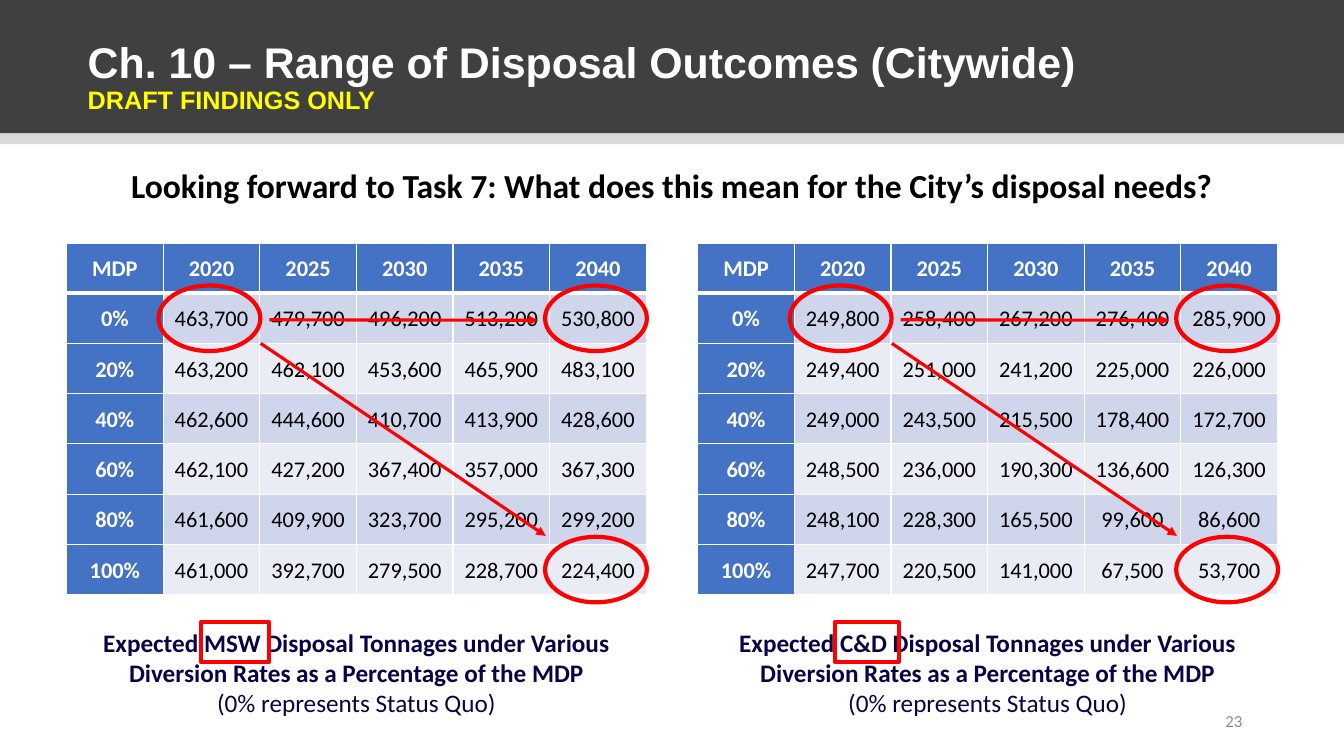
from dataclasses import dataclass
from lxml import etree
from pptx import Presentation
from pptx.dml.color import RGBColor
from pptx.enum.shapes import MSO_CONNECTOR, MSO_SHAPE
from pptx.enum.text import MSO_ANCHOR, PP_ALIGN
from pptx.oxml.ns import qn
from pptx.util import Inches, Pt

LINE = MSO_CONNECTOR.STRAIGHT
RECT, OVAL = MSO_SHAPE.RECTANGLE, MSO_SHAPE.OVAL
MID, TOP = MSO_ANCHOR.MIDDLE, MSO_ANCHOR.TOP
LEFT, MIDST, RIGHT = PP_ALIGN.LEFT, PP_ALIGN.CENTER, PP_ALIGN.RIGHT


@dataclass(frozen=True)
class Theme:
    head: str = "Arial"
    body: str = "Calibri"
    white: str = "FFFFFF"
    black: str = "000000"
    dark: str = "404040"
    pale: str = "D9D9D9"
    gray: str = "8C8C8C"
    blue: str = "4472C4"
    odd: str = "CFD5EA"
    even: str = "E9EBF5"
    navy: str = "090446"
    red: str = "FF0000"
    gold: str = "FFFF00"
    title: float = 30.6
    lead: float = 24
    note: float = 18
    cell: float = 16
    page: float = 12
    mark: float = 3
    arrow: float = 2.25


T = Theme()
WIDE, HIGH = 13.33, 7.5

# Table grid, in inches
GRID_TOP = 2.41
COL, ROW = 5.75 / 6, 3.49 / 7

YEARS = ["MDP", "2020", "2025", "2030", "2035", "2040"]
MSW = [
    ["0%", "463,700", "479,700", "496,200", "513,200", "530,800"],
    ["20%", "463,200", "462,100", "453,600", "465,900", "483,100"],
    ["40%", "462,600", "444,600", "410,700", "413,900", "428,600"],
    ["60%", "462,100", "427,200", "367,400", "357,000", "367,300"],
    ["80%", "461,600", "409,900", "323,700", "295,200", "299,200"],
    ["100%", "461,000", "392,700", "279,500", "228,700", "224,400"],
]
CND = [
    ["0%", "249,800", "258,400", "267,200", "276,400", "285,900"],
    ["20%", "249,400", "251,000", "241,200", "225,000", "226,000"],
    ["40%", "249,000", "243,500", "215,500", "178,400", "172,700"],
    ["60%", "248,500", "236,000", "190,300", "136,600", "126,300"],
    ["80%", "248,100", "228,300", "165,500", "99,600", "86,600"],
    ["100%", "247,700", "220,500", "141,000", "67,500", "53,700"],
]


def inch(*sizes):
    return [Inches(size) for size in sizes]


def spot(left, col, row):
    """Turn a grid place into slide lengths."""
    return inch(left + col * COL, GRID_TOP + row * ROW)


def style(font, size, color, bold=False, name=T.body):
    font.name, font.size, font.bold = name, Pt(size), bold
    font.color.rgb = RGBColor.from_string(color)


def paint(fill, color):
    fill.solid()
    fill.fore_color.rgb = RGBColor.from_string(color)


def add_band(slide, top, high, color):
    band = slide.shapes.add_shape(RECT, *inch(0, top, WIDE, high))
    band.shadow.inherit = False
    paint(band.fill, color)
    band.line.fill.background()


def add_text(slide, box, lines, size, color, align=MIDST, anchor=TOP):
    """Each line is a pair of text and bold."""
    frame = slide.shapes.add_textbox(*inch(*box)).text_frame
    frame.word_wrap = True
    frame.vertical_anchor = anchor
    for i, (text, bold) in enumerate(lines):
        para = frame.add_paragraph() if i else frame.paragraphs[0]
        para.text, para.alignment = text, align
        style(para.font, size, color, bold)


def add_title(slide):
    title = slide.shapes.title
    slide.shapes._spTree.append(title._element)  # in front of the bands
    title.left, title.top, title.width, title.height = inch(0.77, 0.4, 11.5, 0.76)
    frame = title.text_frame
    frame.word_wrap, frame.vertical_anchor = True, MID
    para = frame.paragraphs[0]
    para.alignment, para.line_spacing = LEFT, 0.9
    main_run = para.add_run()
    main_run.text = "Ch. 10 – Range of Disposal Outcomes (Citywide)"
    style(main_run.font, T.title, T.white, True, T.head)
    para.add_line_break()
    draft = para.add_run()
    draft.text = "DRAFT FINDINGS ONLY"
    style(draft.font, T.note, T.gold, True, T.head)


def set_edge(cell, side, points):
    props = cell._tc.get_or_add_tcPr()
    edge = etree.SubElement(props, qn("a:ln" + side), w=str(Pt(points)))
    fill = etree.SubElement(edge, qn("a:solidFill"))
    etree.SubElement(fill, qn("a:srgbClr"), val=T.white)


def fill_cell(cell, text, row, col):
    head = row == 0 or col == 0
    for side in "LRTB":
        thick = (row == 0 and side == "B") or (row == 1 and side == "T")
        set_edge(cell, side, 3 if thick else 1)
    paint(cell.fill, T.blue if head else T.odd if row % 2 else T.even)
    cell.margin_left = cell.margin_right = Inches(0.07)
    cell.margin_top = cell.margin_bottom = 0
    cell.vertical_anchor = MID
    para = cell.text_frame.paragraphs[0]
    para.text, para.alignment, para.line_spacing = text, MIDST, 1.07
    style(para.font, T.cell, T.white if head else T.black, head)


def add_grid(slide, left, data):
    rows = [YEARS] + data
    size = inch(COL * len(YEARS), ROW * len(rows))
    table = slide.shapes.add_table(
        len(rows), len(YEARS), *spot(left, 0, 0), *size).table
    for r, texts in enumerate(rows):
        for c, text in enumerate(texts):
            fill_cell(table.cell(r, c), text, r, c)


def add_mark(slide, kind, place, size):
    mark = slide.shapes.add_shape(kind, *place, *size)
    mark.shadow.inherit = False
    mark.fill.background()
    mark.line.color.rgb = RGBColor.from_string(T.red)
    mark.line.width = Pt(T.mark)


def add_ring(slide, left, col, row):
    """Ring one table cell."""
    wide, high = 1.01, 0.65
    x, y = spot(left - 0.02, col + 0.5, row + 0.5)
    size = inch(wide, high)
    add_mark(slide, OVAL, (x - size[0] // 2, y - size[1] // 2), size)


def add_arrow(slide, start, end):
    arrow = slide.shapes.add_connector(LINE, *start, *end)
    arrow.line.color.rgb = RGBColor.from_string(T.red)
    arrow.line.width = Pt(T.arrow)
    etree.SubElement(arrow.line._get_or_add_ln(), qn("a:tailEnd"), type="triangle")
    etree.SubElement(arrow._element.spPr, qn("a:effectLst"))


def add_panel(slide, left, name, data, tag_col, tag_wide):
    """One waste stream: table, caption, rings, arrows and name tag."""
    add_grid(slide, left, data)
    add_text(slide, (left, 6.17, COL * len(YEARS), 1.01), [
        (f"Expected {name} Disposal Tonnages under Various "
         "Diversion Rates as a Percentage of the MDP", True),
        ("(0% represents Status Quo)", False),
    ], T.note, T.navy)
    for col, row in ((1, 1), (5, 1), (5, 6)):
        add_ring(slide, left, col, row)
    add_arrow(slide, spot(left, 2.1, 1.53), spot(left, 4.88, 1.54))
    add_arrow(slide, spot(left, 2.01, 2), spot(left, 4.96, 5.83))
    add_mark(slide, RECT, spot(left, tag_col, 7.55), inch(tag_wide * COL, 0.39))


def main():
    deck = Presentation()
    deck.slide_width, deck.slide_height = inch(WIDE, HIGH)
    slide = deck.slides.add_slide(deck.slide_layouts[5])

    # Header
    add_band(slide, 1.27, 0.16, T.pale)
    add_band(slide, 0, 1.32, T.dark)
    add_title(slide)
    add_text(slide, (0.98, 1.59, 11.37, 0.5), [
        ("Looking forward to Task 7: What does this mean for "
         "the City’s disposal needs?", True)], T.lead, T.black)

    # Waste streams
    add_panel(slide, 0.66, "MSW", MSW, 1.39, 0.71)
    add_panel(slide, 6.92, "C&D", CND, 1.42, 0.66)

    # Page number
    add_text(slide, (9.42, 6.95, 3, 0.4), [("23", False)],
             T.page, T.gray, RIGHT, MID)
    deck.save("out.pptx")


if __name__ == "__main__":
    main()
